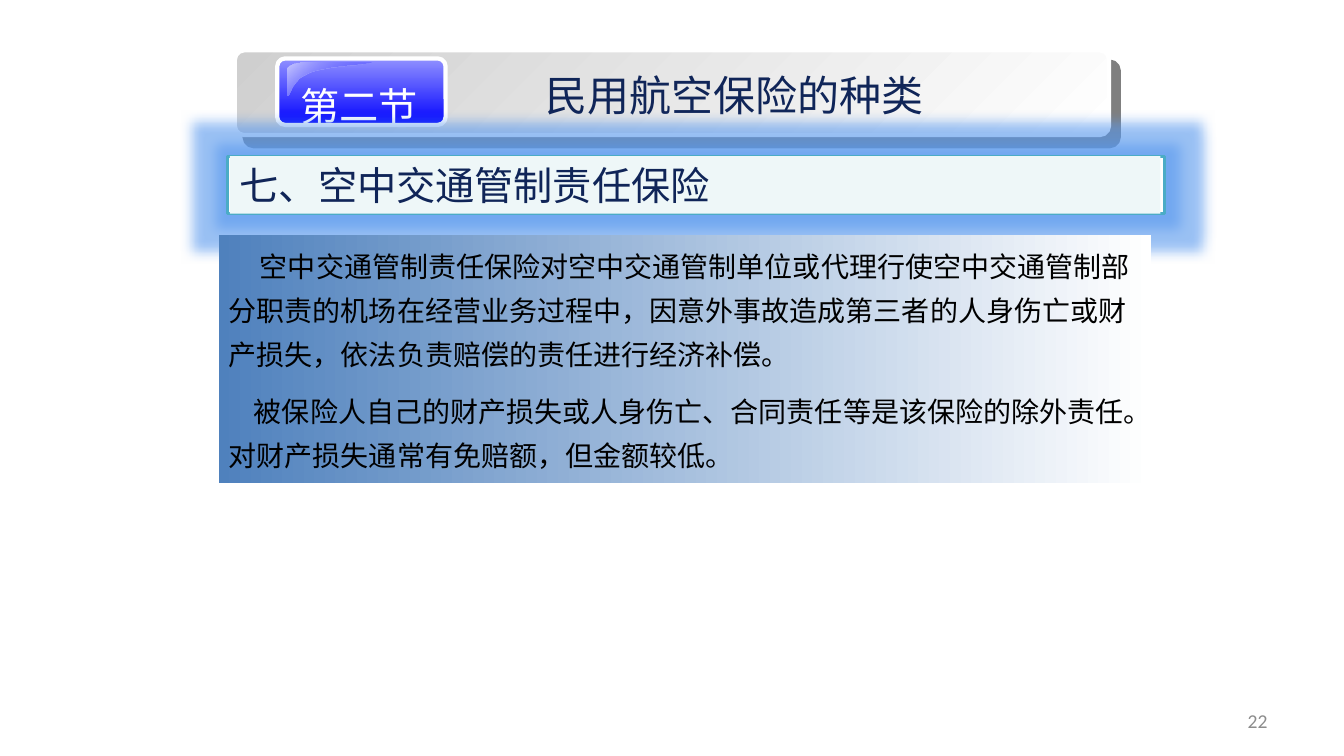
from lxml.etree import SubElement
from pptx import Presentation
from pptx.dml.color import RGBColor
from pptx.enum.shapes import MSO_SHAPE
from pptx.enum.text import MSO_ANCHOR, PP_ALIGN
from pptx.oxml.ns import qn
from pptx.util import Inches, Pt

COLORS = {
    "white": "FFFFFF", "black": "000000", "navy": "102558", "gray": "8C8C8C",
    "silver": "CFCFCF", "violet": "9191FF", "blue": "0000FF", "gloss": "C9C9FF",
    "teal": "4BACC6", "mint": "EEF7F8", "steel": "4F81BD", "glow": "5898EE",
}
BODY = [
    (0.31, "空中交通管制责任保险对空中交通管制单位或代理行使空中交通管制部分职责的机场在经营业务过程中，因意外事故造成第三者的人身伤亡或财产损失，依法负责赔偿的责任进行经济补偿。"),
    (0.25, "被保险人自己的财产损失或人身伤亡、合同责任等是该保险的除外责任。对财产损失通常有免赔额，但金额较低。"),
]
GLOSS_START = (3.02, 0.62)
GLOSS_CURVES = [
    [(3.02, 0.62), (2.93, 0.62), (2.85, 0.65), (2.85, 0.69)],
    [(2.85, 0.95), (2.89, 0.95), (2.87, 0.8), (3.08, 0.72)],
    [(3.08, 0.72), (3.29, 0.65), (3.69, 0.64), (3.68, 0.62)],
]


def rgb(name):
    return RGBColor.from_string(COLORS[name])


def add_color(parent, name, alpha):
    clr = SubElement(parent, qn("a:srgbClr"), val=COLORS[name])
    SubElement(clr, qn("a:alpha"), val=str(alpha * 1000))


def add_shadow(effects, alpha, dist, angle):
    shadow = SubElement(effects, qn("a:outerShdw"), blurRad="0",
                        dist=str(Pt(dist)), dir=str(angle * 60000),
                        algn="ctr", rotWithShape="0")
    add_color(shadow, "black", alpha)


def effects_of(sp):
    sp.shadow.inherit = False
    return sp._element.spPr.find(qn("a:effectLst"))


def paint(sp, fill, angle=0, line=None, width=0):
    if isinstance(fill, tuple):
        sp.fill.gradient()
        sp.fill.gradient_angle = -angle % 360
        for stop, name in zip(sp.fill.gradient_stops, fill):
            stop.color.rgb = rgb(name)
    else:
        sp.fill.solid()
        sp.fill.fore_color.rgb = rgb(fill)
    if line:
        sp.line.color.rgb = rgb(line)
        sp.line.width = Pt(width)
    else:
        sp.line.fill.background()
    sp.shadow.inherit = False


def add_box(s, box, fill, radius=None, **style):
    kind = MSO_SHAPE.RECTANGLE if radius is None else MSO_SHAPE.ROUNDED_RECTANGLE
    sp = s.shapes.add_shape(kind, *map(Inches, box))
    if radius is not None:
        sp.adjustments[0] = radius
    paint(sp, fill, **style)
    return sp


def set_text(sp, paragraphs, size, font, color, align=PP_ALIGN.LEFT,
             anchor=MSO_ANCHOR.TOP, wrap=True, **spacing):
    tf = sp.text_frame
    tf.word_wrap = wrap
    tf.vertical_anchor = anchor
    for i, (indent, text) in enumerate(paragraphs):
        p = tf.add_paragraph() if i else tf.paragraphs[0]
        for name, value in {"alignment": align, **spacing}.items():
            setattr(p, name, value)
        if indent:
            p._p.get_or_add_pPr().set("indent", str(Inches(indent)))
        r = p.add_run()
        r.text = text
        for name, value in {"size": Pt(size), "name": font}.items():
            setattr(r.font, name, value)
        r.font.color.rgb = rgb(color)
    return tf


def add_label(s, box, text, size, font, color, **style):
    sp = s.shapes.add_textbox(*map(Inches, box))
    return set_text(sp, [(0, text)], size, font, color, **style)


def curve_points(curve, steps=12):
    for i in range(steps + 1):
        t = i / steps
        weights = ((1 - t) ** 3, 3 * t * (1 - t) ** 2, 3 * t * t * (1 - t), t ** 3)
        yield tuple(Inches(sum(w * pt[axis] for w, pt in zip(weights, curve)))
                    for axis in (0, 1))


def add_gloss(s):
    builder = s.shapes.build_freeform(*map(Inches, GLOSS_START))
    for curve in GLOSS_CURVES:
        builder.add_line_segments(list(curve_points(curve)), close=False)
    builder.add_line_segments([tuple(map(Inches, GLOSS_START))], close=True)
    sp = builder.convert_to_shape()
    paint(sp, ("gloss", "blue"), angle=45)
    last = sp._element.spPr.findall(".//" + qn("a:srgbClr"))[-1]
    SubElement(last, qn("a:alpha"), val="0")


def add_header(s):
    bar = add_box(s, (2.33, 0.5, 8.67, 0.84), ("silver", "white"), radius=0.109,
                  angle=45, line="white", width=3)
    add_shadow(effects_of(bar), 50, 10.6, 49)
    add_label(s, (4.1, 0.64, 6.37, 0.6), "民用航空保险的种类", 30, "Arial", "navy",
              align=PP_ALIGN.CENTER)
    add_box(s, (2.75, 0.58, 1.67, 0.66), ("violet", "blue"), radius=0.119,
            angle=90, line="white", width=3)
    add_gloss(s)
    tf = add_label(s, (2.88, 0.77, 1.37, 0.57), "第二节", 28, "Arial", "white",
                   align=PP_ALIGN.CENTER, wrap=False)
    rPr = tf.paragraphs[0].runs[0].font._element
    effects = rPr.makeelement(qn("a:effectLst"))
    rPr.find(qn("a:solidFill")).addnext(effects)
    add_shadow(effects, 100, 2, 45)


def add_heading(s):
    frame = add_box(s, (2.26, 1.55, 9.29, 0.57), "white", line="teal", width=2)
    glow = SubElement(effects_of(frame), qn("a:glow"), rad=str(Pt(18)))
    add_color(glow, "glow", 60)
    band = add_box(s, (2.28, 1.55, 9.23, 0.57), "mint")
    set_text(band, [(0, "七、空中交通管制责任保险")], 28, "Arial", "navy")


def add_body(s):
    panel = add_box(s, (2.17, 2.33, 9.25, 2.46), ("steel", "white"))
    set_text(panel, BODY, 20, "Times New Roman", "black",
             line_spacing=1.3, space_before=Pt(10))


def main():
    prs = Presentation()
    prs.slide_width, prs.slide_height = Inches(13.33), Inches(7.5)
    s = prs.slides.add_slide(prs.slide_layouts[6])
    add_label(s, (9.56, 6.95, 3.11, 0.4), "22", 14, "Calibri", "gray",
              align=PP_ALIGN.RIGHT, anchor=MSO_ANCHOR.MIDDLE)
    add_header(s)
    add_heading(s)
    add_body(s)
    prs.save("out.pptx")


if __name__ == "__main__":
    main()
